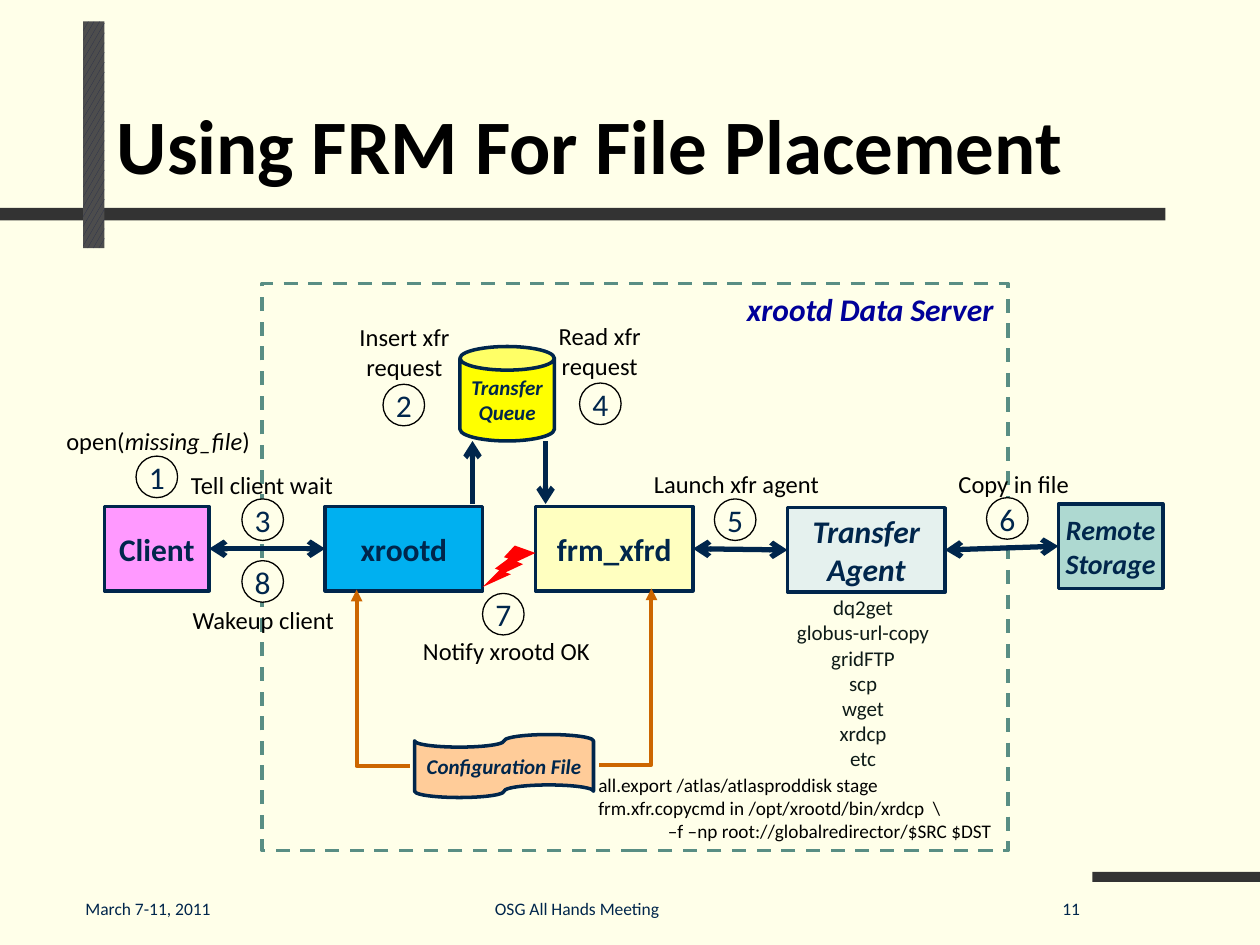
from lxml.etree import SubElement
from pptx import Presentation
from pptx.dml.color import RGBColor
from pptx.enum.dml import MSO_LINE, MSO_PATTERN
from pptx.enum.shapes import MSO_CONNECTOR, MSO_SHAPE
from pptx.enum.text import MSO_ANCHOR, PP_ALIGN
from pptx.oxml.ns import qn
from pptx.util import Inches, Pt


class Theme:
    font = "Calibri"
    paper = RGBColor.from_string("FFFFE9")
    navy = RGBColor.from_string("00264C")
    black = RGBColor.from_string("000000")
    bar = RGBColor.from_string("333333")
    stripe_fore = RGBColor.from_string("262D4C")
    stripe_back = RGBColor.from_string("4D4D4D")
    frame = RGBColor.from_string("598E84")
    heading = RGBColor.from_string("000099")
    agents = RGBColor.from_string("0E1B18")
    config_line = RGBColor.from_string("CC6600")
    pink = RGBColor.from_string("FF99FF")
    blue = RGBColor.from_string("00B0F0")
    cream = RGBColor.from_string("FFFFC0")
    yellow = RGBColor.from_string("FFFF00")
    peach = RGBColor.from_string("FFCC99")
    ice = RGBColor.from_string("E5F1EE")
    teal = RGBColor.from_string("AED9D1")
    red = RGBColor.from_string("FF0000")
    title, node, store, label, small, code, footer = (
        Pt(n) for n in (44, 18, 16, 14, 12, 11, 10))


LEFT, CENTER, RIGHT = PP_ALIGN.LEFT, PP_ALIGN.CENTER, PP_ALIGN.RIGHT
RECT = MSO_SHAPE.RECTANGLE

prs = Presentation()
prs.slide_width, prs.slide_height = Inches(10), Inches(7.5)
s = prs.slides.add_slide(prs.slide_layouts[6])
s.background.fill.solid()
s.background.fill.fore_color.rgb = Theme.paper


def write(sp, text, size, color, align=CENTER, **style):
    """Fill a shape with text: one paragraph a line, *stars* around italics."""
    tf = sp.text_frame
    tf.word_wrap = False
    for i, line in enumerate(text.split("\n")):
        p = tf.paragraphs[0] if i == 0 else tf.add_paragraph()
        p.alignment = align
        for j, part in enumerate(line.split("*")):
            r = p.add_run()
            r.text = part
            r.font.color.rgb = color
            fmt = {"name": Theme.font, "size": size, **style}
            if j % 2:
                fmt["italic"] = True
            for key, value in fmt.items():
                setattr(r.font, key, value)


def add_box(kind, at, fill=None, line=None, width=2):
    """Add a preset shape without shadow and with centred, unpadded text."""
    sp = s.shapes.add_shape(kind, *map(Inches, at))
    sp.shadow.inherit = False
    if fill is None:
        sp.fill.background()
    else:
        sp.fill.solid()
        sp.fill.fore_color.rgb = fill
    if line is None:
        sp.line.fill.background()
    else:
        sp.line.color.rgb = line
        sp.line.width = Pt(width)
    fmt = {"margin_left": 0, "margin_right": 0, "margin_top": 0,
           "margin_bottom": 0, "vertical_anchor": MSO_ANCHOR.MIDDLE}
    for key, value in fmt.items():
        setattr(sp.text_frame, key, value)
    return sp


# Slide decoration
for at in ((0, 1.65, 9.25, 0.1), (8.67, 6.92, 1.33, 0.08)):
    add_box(RECT, at, Theme.bar)
stripe = add_box(RECT, (0.66, 0.17, 0.17, 1.8))
stripe.fill.patterned()
stripe.fill.pattern = MSO_PATTERN.LARGE_CONFETTI
stripe.fill.fore_color.rgb = Theme.stripe_fore
stripe.fill.back_color.rgb = Theme.stripe_back

# Server frame
frame = add_box(RECT, (2.08, 2.25, 5.92, 4.5), line=Theme.frame)
frame.line.dash_style = MSO_LINE.DASH

# Nodes
nodes = {}
for text, kind, at, fill, size, italic in (
    ("Client", RECT, (0.83, 4.02, 0.83, 0.67), Theme.pink, Theme.node, False),
    ("xrootd", RECT, (2.58, 4.02, 1.25, 0.67), Theme.blue, Theme.node, False),
    ("frm_xfrd", RECT, (4.25, 4.02, 1.25, 0.67), Theme.cream, Theme.node, False),
    ("Transfer\nAgent", RECT, (6.25, 4.03, 1.25, 0.67), Theme.ice, Theme.node, True),
    ("Remote\nStorage", RECT, (8.4, 4, 0.83, 0.67), Theme.teal, Theme.store, True),
    ("Transfer\nQueue", MSO_SHAPE.CAN, (3.65, 2.75, 0.75, 0.75),
     Theme.yellow, Theme.small, True),
    ("Configuration File", MSO_SHAPE.FLOWCHART_PUNCHED_TAPE,
     (3.29, 5.83, 1.42, 0.5), Theme.peach, Theme.small, True),
):
    nodes[text] = add_box(kind, at, fill, Theme.navy)
    write(nodes[text], text, size, Theme.navy, bold=True, italic=italic)

# Notification bolt
bolt = add_box(MSO_SHAPE.LIGHTNING_BOLT, (3.83, 4.33, 0.42, 0.33), Theme.red)
bolt._element.spPr.find(qn("a:xfrm")).set("flipH", "1")

# Arrows: corners, joined nodes, turn of an elbow, arrowheads
for ends, joined, turn, head, tail in (
    ((1.66, 4.36, 2.58, 4.36), ("Client", "xrootd"), None, "arrow", "arrow"),
    ((5.5, 4.36, 6.25, 4.36), ("frm_xfrd", "Transfer\nAgent"), None, "arrow", "arrow"),
    ((7.5, 4.36, 8.4, 4.34), ("Transfer\nAgent", "Remote\nStorage"), None,
     "arrow", "arrow"),
    ((3.75, 4, 3.75, 3.5), None, None, "none", "arrow"),
    ((4.33, 3.5, 4.33, 4), None, None, "none", "arrow"),
    ((3.74, 5.17, 2.34, 5.59), None, 270, "triangle", "none"),
    ((4.26, 5.16, 5.66, 5.58), None, 90, "triangle", "none"),
):
    kind = MSO_CONNECTOR.ELBOW if turn else MSO_CONNECTOR.STRAIGHT
    cx = s.shapes.add_connector(kind, *map(Inches, ends))
    cx.line.color.rgb = Theme.config_line if turn else Theme.navy
    cx.line.width = Pt(2.25 if turn else 3)
    if joined:
        cx.begin_connect(nodes[joined[0]], 3)
        cx.end_connect(nodes[joined[1]], 1)
    spPr = cx._element.spPr
    if turn:
        spPr.find(qn("a:xfrm")).set("rot", str(turn * 60000))
        spPr.find(qn("a:prstGeom")).set("prst", "bentConnector2")
    ln = spPr.find(qn("a:ln"))
    SubElement(ln, qn("a:headEnd")).set("type", head)
    SubElement(ln, qn("a:tailEnd")).set("type", tail)
    SubElement(spPr, qn("a:effectLst"))

# Numbered steps: circle corner, then label box
for number, x, y, text, at in (
    (1, 1.08, 3.62, "open(*missing_file*)", (0.42, 3.33, 1.67, 0.34)),
    (2, 3.04, 3.05, "Insert xfr\nrequest", (2.75, 2.51, 0.92, 0.57)),
    (3, 1.92, 3.96, "Tell client wait", (1.41, 3.68, 1.34, 0.34)),
    (4, 4.6, 3.04, "Read xfr\nrequest", (4.33, 2.5, 0.86, 0.57)),
    (5, 5.67, 3.96, "Launch xfr agent", (5.08, 3.67, 1.53, 0.34)),
    (6, 7.83, 3.95, "Copy in file", (7.5, 3.67, 1.09, 0.34)),
    (7, 3.83, 4.71, "Notify xrootd OK", (3.25, 5, 1.54, 0.34)),
    (8, 1.92, 4.45, "Wakeup client", (1.42, 4.75, 1.34, 0.34)),
):
    circle = add_box(MSO_SHAPE.OVAL, (x, y, 0.33, 0.33), Theme.paper, Theme.black, 0.75)
    write(circle, str(number), Theme.node, Theme.navy)
    write(s.shapes.add_textbox(*map(Inches, at)), text, Theme.label, Theme.black)

# Title, frame heading, agent list, configuration and footer
title = s.shapes.add_textbox(*map(Inches, (0.83, 0.31, 8.67, 1.25)))
title.text_frame.vertical_anchor = MSO_ANCHOR.BOTTOM
write(title, "Using FRM For File Placement", Theme.title, Theme.black, LEFT, bold=True)
heading = s.shapes.add_textbox(*map(Inches, (5.83, 2.25, 2.17, 0.4)))
write(heading, "xrootd Data Server", Theme.node, Theme.heading, LEFT,
      bold=True, italic=True)

agents = "\n".join(("dq2get", "globus-url-copy", "gridFTP", "scp", "wget", "xrdcp", "etc"))
config = "\n".join((
    "all.export /atlas/atlasproddisk stage",
    "frm.xfr.copycmd in /opt/xrootd/bin/xrdcp  \\",
    "                –f –np root://globalredirector/$SRC $DST"))
for text, at, size, color, align in (
    (agents, (6.22, 4.67, 1.26, 1.51), Theme.small, Theme.agents, CENTER),
    (config, (4.65, 6.09, 3.43, 0.66), Theme.code, Theme.black, LEFT),
    ("March 7-11, 2011", (0.58, 7.08, 1.92, 0.27), Theme.footer, Theme.navy, LEFT),
    ("OSG All Hands Meeting", (3.83, 7.08, 1.58, 0.27), Theme.footer, Theme.navy, LEFT),
    ("11", (7.75, 7.08, 0.92, 0.27), Theme.footer, Theme.navy, RIGHT),
):
    write(s.shapes.add_textbox(*map(Inches, at)), text, size, color, align)

prs.save("out.pptx")
